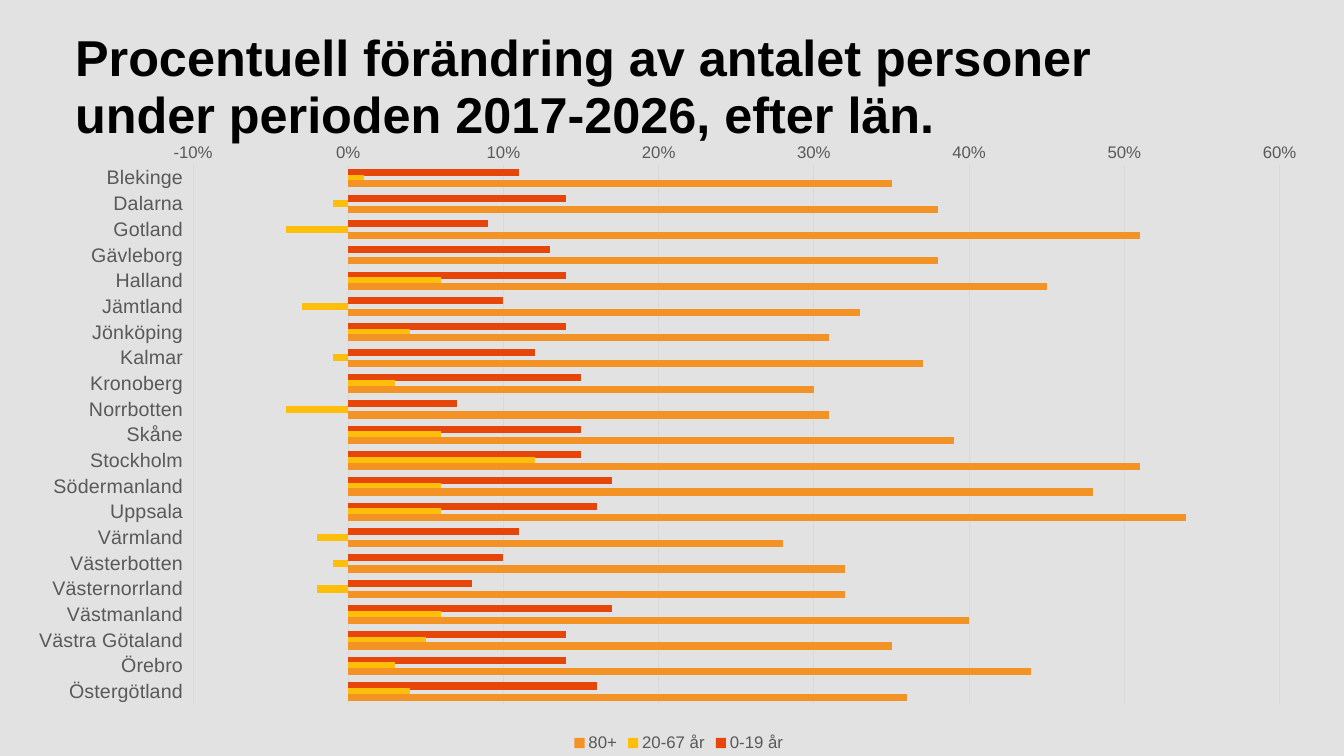
from lxml import etree
from pptx import Presentation
from pptx import util as u
from pptx.chart.data import CategoryChartData
from pptx.dml.color import RGBColor
from pptx.enum import chart as ch, text

PX = 914400 / 100.8
FONT = "Arial"
COLORS = {"background": "E2E2E2", "title": "000000", "label": "595959", "grid": "D9D9D9",
          "0-19 år": "E6460A", "20-67 år": "FFBE0A", "80+": "F39325"}
COUNTIES = ["Blekinge", "Dalarna", "Gotland", "Gävleborg", "Halland", "Jämtland", "Jönköping",
            "Kalmar", "Kronoberg", "Norrbotten", "Skåne", "Stockholm", "Södermanland", "Uppsala",
            "Värmland", "Västerbotten", "Västernorrland", "Västmanland", "Västra Götaland",
            "Örebro", "Östergötland"]
CHANGES = {
    "0-19 år": [0.11, 0.14, 0.09, 0.13, 0.14, 0.1, 0.14, 0.12, 0.15, 0.07, 0.15,
                0.15, 0.17, 0.16, 0.11, 0.1, 0.08, 0.17, 0.14, 0.14, 0.16],
    "20-67 år": [0.01, -0.01, -0.04, 0, 0.06, -0.03, 0.04, -0.01, 0.03, -0.04, 0.06,
                 0.12, 0.06, 0.06, -0.02, -0.01, -0.02, 0.06, 0.05, 0.03, 0.04],
    "80+": [0.35, 0.38, 0.51, 0.38, 0.45, 0.33, 0.31, 0.37, 0.3, 0.31, 0.39,
            0.51, 0.48, 0.54, 0.28, 0.32, 0.32, 0.4, 0.35, 0.44, 0.36],
}


def px(n):
    """Turn pixels into EMU."""
    return u.Emu(round(n * PX))


def rgb(name):
    """Look up a named colour."""
    return RGBColor.from_string(COLORS[name])


def style_font(font, size, color, bold=False):
    """Set typeface, size, colour and weight."""
    font.name, font.size, font.bold = FONT, u.Pt(size), bold
    font.color.rgb = rgb(color)


def style_line(line):
    """Give a chart line the thin grid look."""
    line.color.rgb = rgb("grid")
    line.width = u.Pt(0.75)


def set_plot_layout(chart, x, y, w, h):
    """Fix the inner plot area as fractions of the chart."""
    area = chart._chartSpace.chart.plotArea
    ns = area.nsmap["c"]
    for old in area.findall(f"{{{ns}}}layout"):
        area.remove(old)
    layout = etree.Element(f"{{{ns}}}layout")
    manual = etree.SubElement(layout, f"{{{ns}}}manualLayout")
    settings = {"layoutTarget": "inner", "xMode": "edge", "yMode": "edge",
                "x": x, "y": y, "w": w, "h": h}
    for tag, value in settings.items():
        etree.SubElement(manual, f"{{{ns}}}{tag}").set("val", str(value))
    area.insert(0, layout)


def add_title(s, x, y, w, h):
    """Place the heading in the title placeholder."""
    sp = s.shapes.title
    sp.left, sp.top, sp.width, sp.height = map(px, (x, y, w, h))
    tf = sp.text_frame
    tf.text = "Procentuell förändring av antalet personer under perioden 2017-2026, efter län."
    tf.word_wrap = True
    tf.auto_size = text.MSO_AUTO_SIZE.NONE
    tf.vertical_anchor = text.MSO_ANCHOR.MIDDLE
    p = tf.paragraphs[0]
    p.alignment = text.PP_ALIGN.LEFT
    p.line_spacing = 0.95
    style_font(p.runs[0].font, 36, "title", bold=True)


def style_axes(chart):
    """Format the county axis and the percentage axis."""
    counties, percent = chart.category_axis, chart.value_axis
    for axis, size in ((counties, 14), (percent, 12)):
        axis.major_tick_mark = axis.minor_tick_mark = ch.XL_TICK_MARK.NONE
        style_font(axis.tick_labels.font, size, "label")
    counties.reverse_order = True
    counties.tick_label_position = ch.XL_TICK_LABEL_POSITION.LOW
    style_line(counties.format.line)
    percent.minimum_scale, percent.maximum_scale, percent.major_unit = -0.1, 0.6, 0.1
    percent.tick_labels.number_format = "0%"
    percent.tick_labels.number_format_is_linked = False
    percent.format.line.fill.background()
    percent.has_major_gridlines = True
    style_line(percent.major_gridlines.format.line)


def add_county_chart(s, x, y, w, h):
    """Place the clustered bars by county and age group."""
    data = CategoryChartData(number_format="0%")
    data.categories = COUNTIES
    for age, values in CHANGES.items():
        data.add_series(age, values)
    chart = s.shapes.add_chart(ch.XL_CHART_TYPE.BAR_CLUSTERED, *map(px, (x, y, w, h)), data).chart
    style_font(chart.font, 12, "title")
    chart.has_title = False
    chart.has_legend = True
    chart.legend.position = ch.XL_LEGEND_POSITION.BOTTOM
    chart.legend.include_in_layout = False
    style_font(chart.legend.font, 12, "label")
    plot = chart.plots[0]
    plot.gap_width, plot.overlap, plot.vary_by_categories = 100, 20, False
    for series in plot.series:
        series.invert_if_negative = False
        series.format.fill.solid()
        series.format.fill.fore_color.rgb = rgb(series.name)
    style_axes(chart)
    set_plot_layout(chart, 0.12, 0.08, 0.85, 0.84)


def main():
    """Build and save the slide."""
    prs = Presentation()
    prs.slide_width, prs.slide_height = px(1344), px(756)
    s = prs.slides.add_slide(prs.slide_layouts[5])
    s.background.fill.solid()
    s.background.fill.fore_color.rgb = rgb("background")
    add_title(s, 65, 20, 1059, 136)
    add_county_chart(s, 39, 114, 1279, 642)
    prs.save("out.pptx")


if __name__ == "__main__":
    main()
